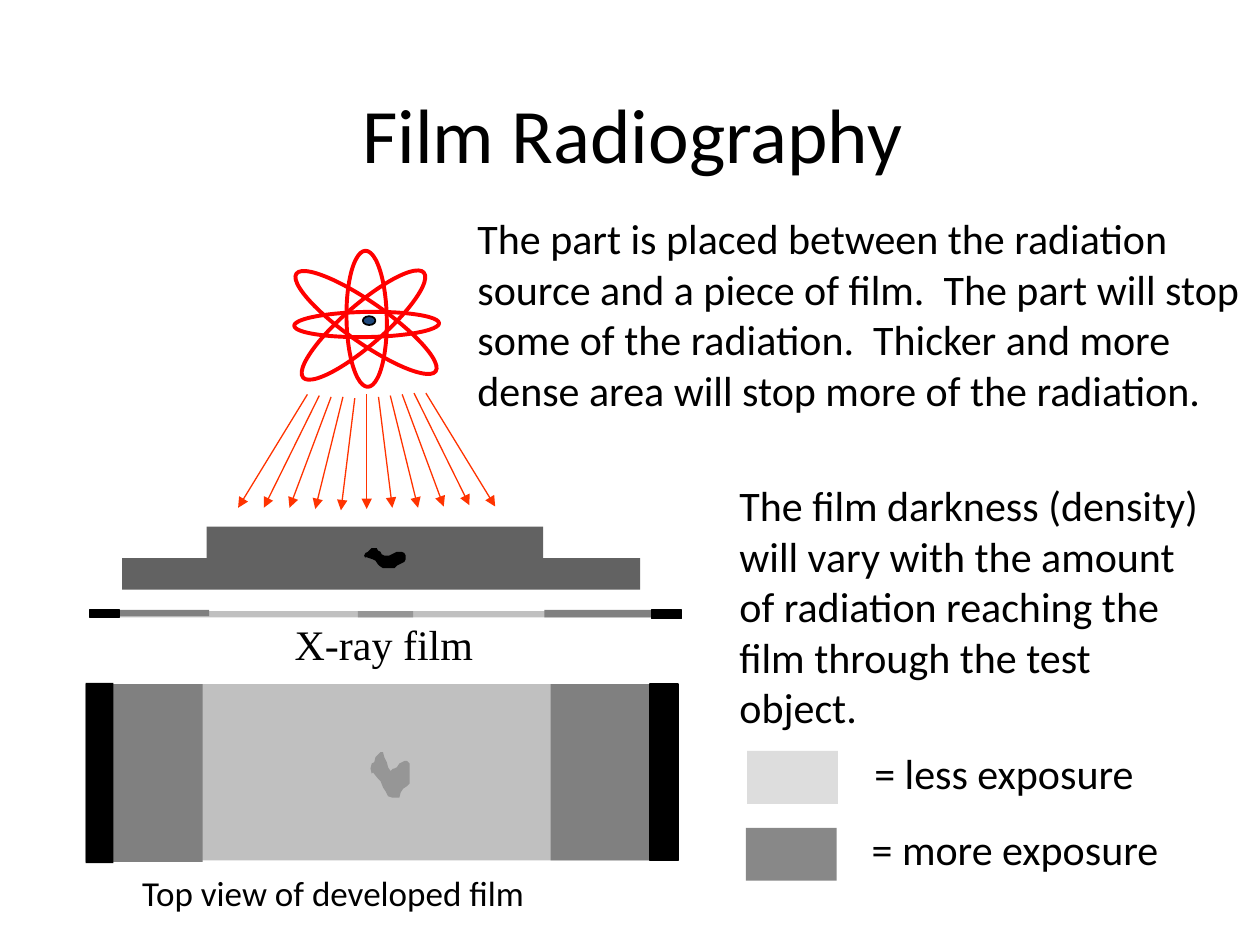
from lxml import etree
from pptx import Presentation
from pptx.dml.color import RGBColor
from pptx.enum import shapes, text
from pptx.oxml.ns import qn
from pptx.util import Inches, Pt

BLACK = RGBColor(0, 0, 0)
RED = RGBColor(0xFF, 0, 0)
RAY = RGBColor(0xFF, 0x33, 0)
NAVY = RGBColor(0x1F, 0x49, 0x7D)
STEEL = RGBColor(0x62, 0x62, 0x62)
DARK = RGBColor(0x80, 0x80, 0x80)
MORE = RGBColor(0x88, 0x88, 0x88)
FLAW = RGBColor(0x96, 0x96, 0x96)
LIGHT = RGBColor(0xC0, 0xC0, 0xC0)
LESS = RGBColor(0xDD, 0xDD, 0xDD)
RECT = shapes.MSO_SHAPE.RECTANGLE
OVAL = shapes.MSO_SHAPE.OVAL

deck = Presentation()
deck.slide_width, deck.slide_height = Inches(10), Inches(7.5)
slide = deck.slides.add_slide(deck.slide_layouts[5])
canvas = slide.shapes


def paint(shape, fill=None, line=None, width=1):
    shape.shadow.inherit = False
    if fill is None:
        shape.fill.background()
    else:
        shape.fill.solid()
        shape.fill.fore_color.rgb = fill
    if line is None:
        shape.line.fill.background()
    else:
        shape.line.color.rgb = line
        shape.line.width = Pt(width)


def trace(points, fill):
    """Draw a closed outline from points in hundredths of an inch."""
    pen = canvas.build_freeform(*points[0], scale=Inches(0.01))
    pen.add_line_segments(points[1:], close=True)
    paint(pen.convert_to_shape(), fill)


# Title
title = canvas.title
title.left, title.top = Inches(1.99), Inches(0.57)
title.width, title.height = Inches(6.06), Inches(0.96)
title.text_frame.text = "Film Radiography"
title.text_frame.vertical_anchor = text.MSO_ANCHOR.MIDDLE
head = title.text_frame.paragraphs[0]
head.alignment = text.PP_ALIGN.CENTER
head.font.size, head.font.name = Pt(44), "Calibri"
head.font.color.rgb = BLACK

# Radiation source
orbits = [
    (2.81, 2, 0.2, 1.15, 269),
    (2.25, 2.42, 1.27, 0.32, 319),
    (2.23, 2.4, 1.35, 0.32, 35),
    (2.37, 2.37, 1.08, 0.32, 269),
]
for *box, turn in orbits:
    orbit = canvas.add_shape(OVAL, *map(Inches, box))
    orbit.rotation = turn
    paint(orbit, line=RED, width=2.25)
core = canvas.add_shape(OVAL, Inches(2.88), Inches(2.51), Inches(0.1), Inches(0.07))
paint(core, NAVY, BLACK)

# Test part with its flaw
trace([(164, 418), (431, 418), (431, 443), (508, 443), (508, 468),
       (97, 468), (97, 443), (164, 443)], STEEL)
trace([(290, 442), (296, 444), (298, 445), (300, 448), (301, 449), (304, 451),
       (313, 451), (315, 449), (317, 448), (319, 447), (321, 446), (322, 444),
       (322, 441), (321, 439), (319, 438), (315, 438), (313, 439), (311, 440),
       (309, 441), (305, 441), (303, 440), (302, 438), (300, 437), (299, 435),
       (295, 435), (293, 437), (292, 438), (290, 439), (289, 441), (290, 443)],
      BLACK)

# Film seen from the side and from the top, then the key
blocks = [
    (0.71, 4.85, 4.7, 0.05, LIGHT, None),
    (0.72, 4.84, 0.94, 0.05, DARK, None),
    (4.32, 4.84, 1.09, 0.06, DARK, None),
    (2.84, 4.85, 0.44, 0.05, FLAW, None),
    (0.71, 4.84, 0.24, 0.06, BLACK, BLACK),
    (5.17, 4.84, 0.24, 0.07, BLACK, BLACK),
    (0.68, 5.43, 4.7, 1.4, LIGHT, None),
    (4.37, 5.43, 1.01, 1.4, DARK, None),
    (0.68, 5.43, 0.93, 1.41, DARK, None),
    (5.16, 5.43, 0.22, 1.4, BLACK, BLACK),
    (0.68, 5.42, 0.22, 1.43, BLACK, None),
    (5.93, 5.96, 0.72, 0.42, LESS, None),
    (5.92, 6.57, 0.72, 0.42, MORE, None),
]
for *box, fill, line in blocks:
    paint(canvas.add_shape(RECT, *map(Inches, box)), fill, line)

# Flaw on the developed film
trace([(296, 613), (300, 618), (302, 620), (304, 625), (306, 628), (308, 632),
       (311, 633), (317, 633), (318, 629), (320, 626), (323, 624), (325, 622),
       (325, 606), (323, 604), (321, 604), (319, 605), (317, 606), (315, 609),
       (313, 610), (312, 610), (310, 612), (308, 609), (307, 605), (305, 601),
       (304, 597), (302, 597), (300, 599), (298, 601), (297, 605), (295, 606),
       (294, 610), (295, 614)], FLAW)

# Texts
notes = [
    (3.69, 1.64, 6.31, 2.1, 24, "Calibri",
     "The part is placed between the radiation source and a piece of film.  "
     "The part will stop some of the radiation.  Thicker and more dense area "
     "will stop more of the radiation."),
    (5.77, 3.76, 3.97, 2.1, 24, "Calibri",
     "The film darkness (density) will vary with the amount of radiation "
     "reaching the film through the test object."),
    (2.24, 4.86, 1.83, 0.5, 24, "Times New Roman", "X-ray film"),
    (6.84, 5.88, 2.72, 0.5, 24, "Calibri", "= less exposure"),
    (6.82, 6.49, 2.97, 0.5, 24, "Calibri", "= more exposure"),
    (1.03, 6.87, 4.17, 0.43, 20, "Calibri", "Top view of developed film"),
]
for *box, size, face, words in notes:
    frame = canvas.add_textbox(*map(Inches, box)).text_frame
    frame.word_wrap = True
    frame.text = words
    font = frame.paragraphs[0].font
    font.size, font.name = Pt(size), face
    font.color.rgb = BLACK

# Rays fan out evenly from the source
starts = [3.13, 3.14, 3.15, 3.15, 3.16, 3.13, 3.15, 3.14, 3.13, 3.12, 3.12]
ends = [4.03, 4.03, 4.03, 4.04, 4.05, 4.04, 4.03, 4.03, 4.02, 4.01, 4.02]
for step, (top, tip) in enumerate(zip(starts, ends), -5):
    ray = canvas.add_connector(
        shapes.MSO_CONNECTOR.STRAIGHT,
        Inches(2.91 + 0.094 * step), Inches(top),
        Inches(2.91 + 0.204 * step), Inches(tip))
    ray.line.color.rgb = RAY
    ray.line.width = Pt(0.75)
    etree.SubElement(ray.line._get_or_add_ln(), qn("a:tailEnd"), type="triangle")
    etree.SubElement(ray._element.spPr, qn("a:effectLst"))

deck.save("out.pptx")
